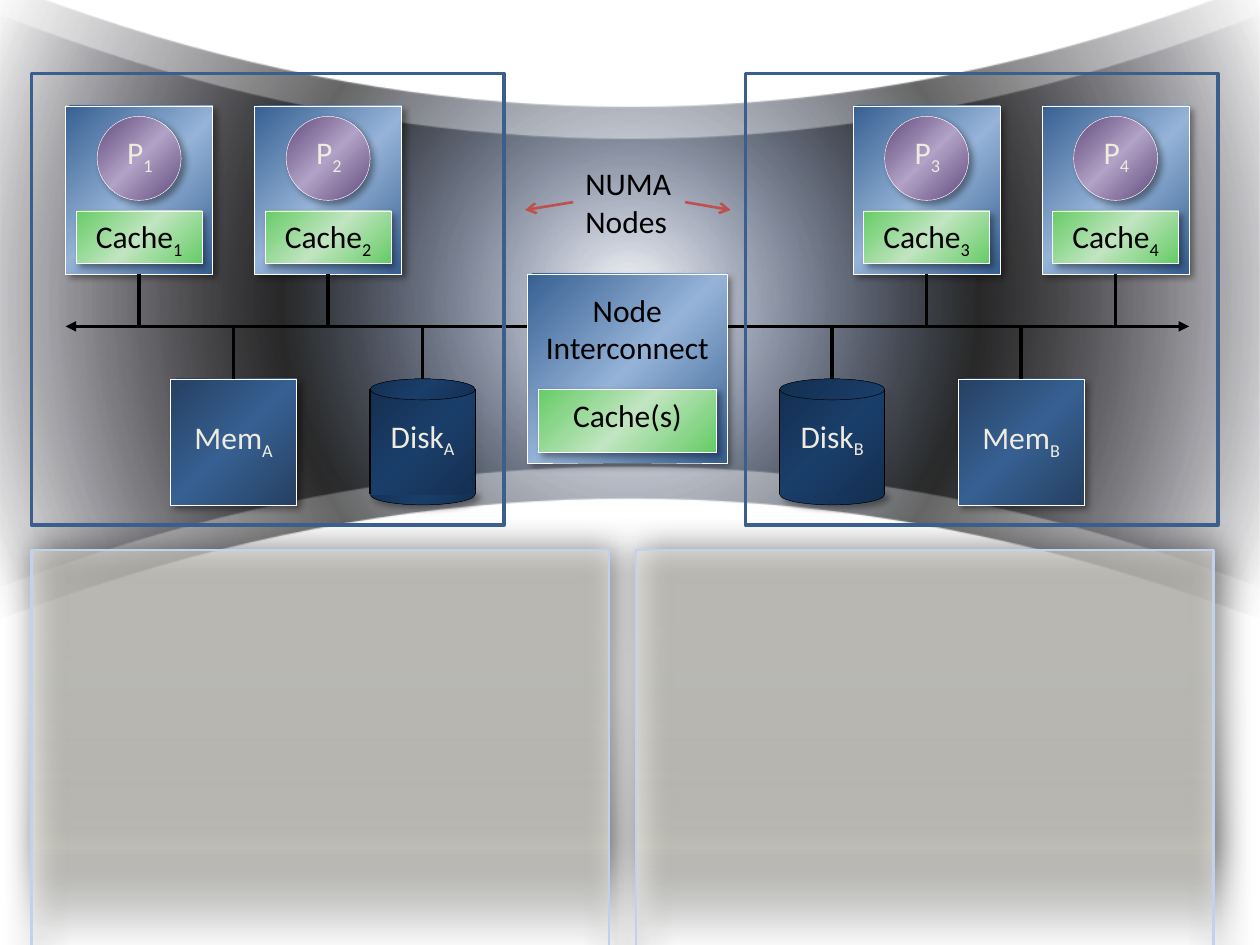
from pptx import Presentation
from pptx.dml.color import RGBColor
from pptx.enum.shapes import MSO_CONNECTOR, MSO_SHAPE
from pptx.enum.text import MSO_AUTO_SIZE, PP_ALIGN
from pptx.oxml import parse_xml
from pptx.oxml.ns import nsdecls, qn
from pptx.util import Pt

RECTANGLE, OVAL = MSO_SHAPE.RECTANGLE, MSO_SHAPE.OVAL
STRAIGHT = MSO_CONNECTOR.STRAIGHT
LEFT, CENTER = PP_ALIGN.LEFT, PP_ALIGN.CENTER
FIT_SHAPE = MSO_AUTO_SIZE.SHAPE_TO_FIT_TEXT
TOP_SIDE, BOTTOM_SIDE = 0, 2

COLORS = {
    "black": "000000", "white": "FFFFFF", "cream": "EEECE1",
    "frame": "3A5F8C", "panel_line": "C2D1ED", "red": "C0504D",
    "blue": "376092", "light_blue": "95B3D7", "navy": "254061",
    "purple": "604A7B", "light_purple": "B3A2C7",
    "green": "66CC66", "light_green": "C1E5C1",
    "disk_dark": "142F51", "disk_light": "1A3E6A",
    "band_center": "002060", "band_edge": "010113",
}


def sheen(edge, middle):
    return [(0, edge, 100), (50, middle, 100), (100, edge, 100)]


# Gradient stops: position %, colour, opacity %
NODE_FILL = sheen("blue", "light_blue")
PROCESSOR_FILL = sheen("purple", "light_purple")
CACHE_FILL = sheen("green", "light_green")
MEMORY_FILL = sheen("navy", "blue")
DISK_FILL = sheen("disk_dark", "disk_light")
DISK_RISING = [(0, "disk_dark", 100), (100, "disk_light", 100)]
DISK_FALLING = [(0, "disk_light", 100), (100, "disk_dark", 100)]
BAND_FILL = [(0, "band_center", 0), (50, "black", 60), (100, "band_edge", 0)]
PANEL_FILL = [(9, "white", 0), (31, "cream", 63), (67, "cream", 44), (86, "cream", 46)]

# Shadow: opacity %, blur, distance, direction
SOFT_SHADOW = (40, 4, 3, 45)
PANEL_SHADOW = (100, 19, 3, 0)

BAND_SHIFTS = (0, 18.7)
PANELS = (18, 363.5)
FRAMES = (18, 426)
PROCESSORS = [("1", 37.5), ("2", 145.5), ("3", 487.5), ("4", 595.5)]
MEMORIES = [("A", 97.5), ("B", 547.5)]
DISKS = [("A", 211.5, DISK_FILL, DISK_FILL), ("B", 445.5, DISK_FALLING, DISK_RISING)]
BUSES = [(301.5, 37.5), (415.5, 679.5)]
POINTERS = [(327.5, 300), (391.5, 417.5)]
NODE_TOP, BUS_Y, DEVICE_TOP = 60.5, 186.5, 216.5


def rgb(name):
    return RGBColor.from_string(COLORS[name])


def set_gradient(shape, stops, angle=None):
    """Fill with a linear gradient, or a radial one when no angle is given."""
    stop_xml = "".join(
        f'<a:gs pos="{position * 1000}"><a:srgbClr val="{COLORS[color]}">'
        f'<a:alpha val="{opacity * 1000}"/></a:srgbClr></a:gs>'
        for position, color, opacity in stops)
    if angle is None:
        direction = ('<a:path path="circle"><a:fillToRect l="50000" t="50000" '
                     'r="50000" b="50000"/></a:path>')
    else:
        direction = f'<a:lin ang="{angle * 60000}" scaled="0"/>'
    shape.fill.background()
    properties = shape._element.spPr
    properties.replace(properties.find(qn("a:noFill")), parse_xml(
        f'<a:gradFill {nsdecls("a")} rotWithShape="1"><a:gsLst>{stop_xml}</a:gsLst>'
        f'{direction}</a:gradFill>'))


def effect_list(shadow):
    inner = ""
    if shadow:
        opacity, blur, distance, direction = shadow
        inner = (f'<a:outerShdw blurRad="{Pt(blur)}" dist="{Pt(distance)}" '
                 f'dir="{direction * 60000}" algn="ctr" rotWithShape="0">'
                 f'<a:srgbClr val="{COLORS["black"]}"><a:alpha val="{opacity * 1000}"/>'
                 '</a:srgbClr></a:outerShdw>')
    return parse_xml(f'<a:effectLst {nsdecls("a")}>{inner}</a:effectLst>')


def set_line(item, color, width):
    item.line.color.rgb = rgb(color)
    item.line.width = Pt(width)


def add_box(slide, kind, left, top, width, height, stops=None, angle=45,
            line="white", line_width=0.25, shadow=SOFT_SHADOW):
    shape = slide.shapes.add_shape(kind, Pt(left), Pt(top), Pt(width), Pt(height))
    if stops:
        set_gradient(shape, stops, angle)
    else:
        shape.fill.background()
    if line:
        set_line(shape, line, line_width)
    else:
        shape.line.fill.background()
    shape._element.spPr.append(effect_list(shadow))
    return shape


def add_line(slide, start, end, color="black", width=2, arrow=None, shadow=None):
    connector = slide.shapes.add_connector(STRAIGHT, *(Pt(value) for value in start + end))
    set_line(connector, color, width)
    if arrow:
        connector.line._get_or_add_ln().append(
            parse_xml(f'<a:tailEnd {nsdecls("a")} type="{arrow}"/>'))
    connector._element.spPr.append(effect_list(shadow))
    return connector


def add_text(slide, text, left, top, width, height=29, subscript="",
             color="cream", align=CENTER, wrap=True):
    frame = slide.shapes.add_textbox(Pt(left), Pt(top), Pt(width), Pt(height)).text_frame
    frame.word_wrap = wrap
    frame.auto_size = FIT_SHAPE
    frame.text = text
    if subscript:
        run = frame.paragraphs[0].add_run()
        run.text = subscript
        run._r.get_or_add_rPr().set("baseline", "-25000")
    for paragraph in frame.paragraphs:
        paragraph.alignment = align
        for run in paragraph.runs:
            run.font.name, run.font.size = "Calibri", Pt(18)
            run.font.color.rgb = rgb(color)


def add_band(slide, shift):
    """Draw a band the width of the slide whose edges are two parabolas."""
    steps = range(-20, 21)
    upper = [(360 + 18 * step, 61.2 - 71.3 * (step / 20) ** 2 + shift) for step in steps]
    lower = [(360 + 18 * step, 266.4 + 69.1 * (step / 20) ** 2 + shift) for step in steps]
    points = [(Pt(x), Pt(y)) for x, y in upper + lower[::-1]]
    builder = slide.shapes.build_freeform(*points[0])
    builder.add_line_segments(points[1:], close=True)
    band = builder.convert_to_shape()
    set_gradient(band, BAND_FILL)
    band.line.fill.background()
    band.shadow.inherit = False


def add_processor(slide, number, left):
    node = add_box(slide, RECTANGLE, left, NODE_TOP, 84, 96, NODE_FILL)
    add_box(slide, OVAL, left + 18, NODE_TOP + 6, 48, 48, PROCESSOR_FILL)
    add_box(slide, RECTANGLE, left + 6, NODE_TOP + 60, 72, 30, CACHE_FILL)
    stub = add_line(slide, (left + 42, NODE_TOP + 96), (left + 42, BUS_Y))
    stub.begin_connect(node, BOTTOM_SIDE)
    add_text(slide, "P", left + 24.5, NODE_TOP + 12, 36, subscript=number)
    add_text(slide, "Cache", left, NODE_TOP + 60, 84, subscript=number, color="black")


def add_memory(slide, letter, left):
    memory = add_box(slide, RECTANGLE, left, DEVICE_TOP, 72, 72, MEMORY_FILL)
    stub = add_line(slide, (left + 36, DEVICE_TOP), (left + 36, BUS_Y))
    stub.begin_connect(memory, TOP_SIDE)
    add_text(slide, "Mem", left - 6, DEVICE_TOP + 19, 84, subscript=letter)


def add_disk(slide, letter, left, base_fill, lid_fill):
    body_top, body_bottom, right = DEVICE_TOP + 6, DEVICE_TOP + 66, left + 60
    add_box(slide, OVAL, left, body_bottom - 6, 60, 12, base_fill, line="black")
    add_box(slide, RECTANGLE, left, body_top, 60, 60, DISK_FILL, line=None, shadow=None)
    lid = add_box(slide, OVAL, left, DEVICE_TOP, 60, 12, lid_fill, line="black", shadow=None)
    add_line(slide, (left, body_top), (left, body_bottom), width=0.75)
    add_line(slide, (right, body_top), (right, body_bottom), width=0.25, shadow=SOFT_SHADOW)
    add_text(slide, "Disk", left, DEVICE_TOP + 18, 60, subscript=letter)
    stub = add_line(slide, (left + 30, DEVICE_TOP), (left + 30, BUS_Y))
    stub.begin_connect(lid, TOP_SIDE)


def main():
    presentation = Presentation()
    presentation.slide_width, presentation.slide_height = Pt(720), Pt(540)
    slide = presentation.slides.add_slide(presentation.slide_layouts[6])

    for shift in BAND_SHIFTS:
        add_band(slide, shift)
    for left in PANELS:
        add_box(slide, RECTANGLE, left, 314.5, 330, 246, PANEL_FILL, angle=270,
                line="panel_line", line_width=1.25, shadow=PANEL_SHADOW)
    for start, end in BUSES:
        add_line(slide, (start, BUS_Y), (end, BUS_Y), arrow="triangle")
    add_box(slide, RECTANGLE, 301.5, 156.5, 114, 108, NODE_FILL)
    add_text(slide, "Node Interconnect", 301.5, 162.5, 114, 51, color="black")
    add_box(slide, RECTANGLE, 307.5, 222.5, 102, 36, CACHE_FILL)
    add_text(slide, "Cache(s)", 313.5, 223, 90, color="black")
    for processor in PROCESSORS:
        add_processor(slide, *processor)
    for memory in MEMORIES:
        add_memory(slide, *memory)
    for disk in DISKS:
        add_disk(slide, *disk)
    for left in FRAMES:
        add_box(slide, RECTANGLE, left, 42, 270, 258, line="frame", line_width=2, shadow=None)
    add_text(slide, "NUMA\nNodes", 327.5, 90, 64, 51, color="black", align=LEFT, wrap=False)
    for start, end in POINTERS:
        add_line(slide, (start, 115.5), (end, 120), color="red", width=1.5, arrow="arrow")
    presentation.save("out.pptx")


if __name__ == "__main__":
    main()
